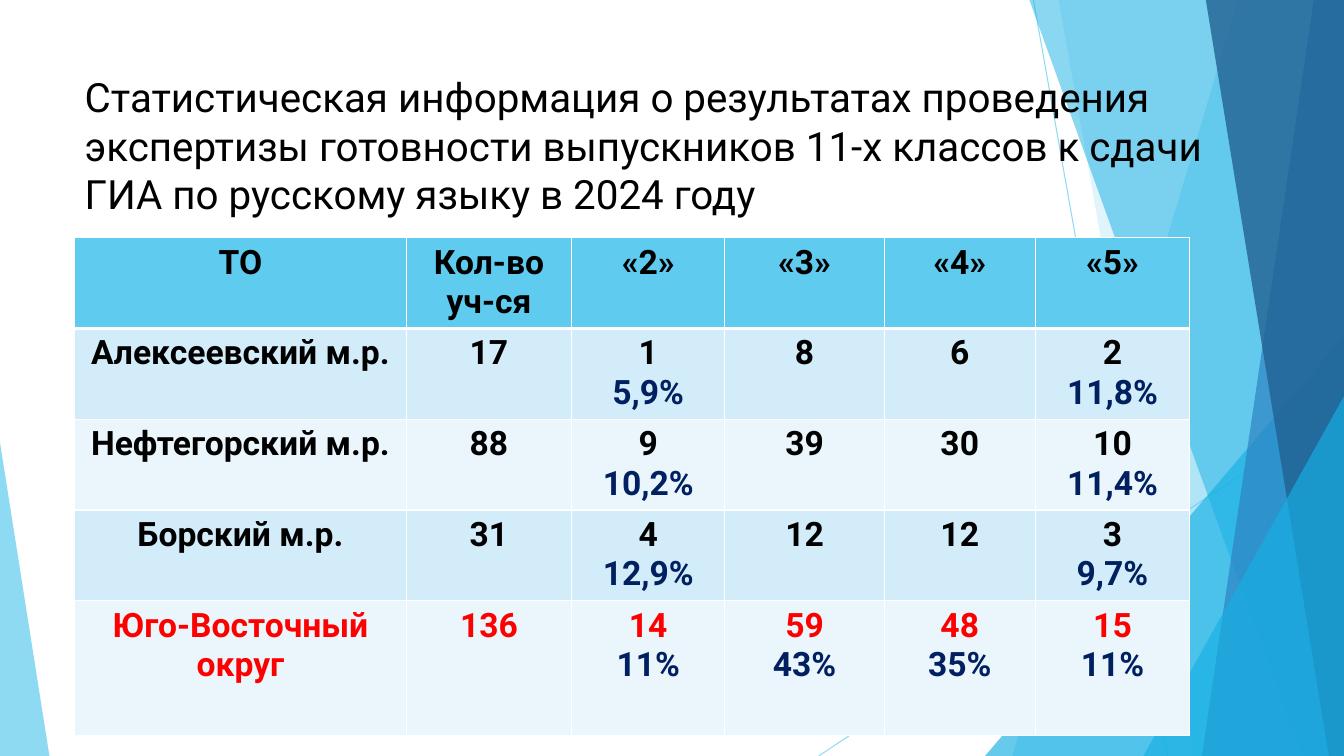
"""Builds a slide with a table of exam readiness results by district."""
from lxml import etree
from pptx import Presentation
from pptx.dml.color import RGBColor
from pptx.enum.shapes import MSO_CONNECTOR as CONN, MSO_SHAPE as SHAPE
from pptx.enum.text import MSO_ANCHOR as ANCHOR, MSO_AUTO_SIZE as AUTO, PP_ALIGN as ALIGN
from pptx.oxml.ns import qn
from pptx.util import Inches, Pt

COLORS = {
    "sky": "5FCBEF", "azure": "17B0E4", "blue": "2E83C3", "deep": "226292",
    "odd": "D2ECF9", "even": "EAF6FC", "white": "FFFFFF",
    "black": "000000", "navy": "002060", "red": "FF0000",
}


def paint(fill, color, alpha=100):
    fill.solid()
    fill.fore_color.rgb = RGBColor.from_string(COLORS[color])
    if alpha < 100:
        clr = fill._xPr.find(".//" + qn("a:srgbClr"))
        etree.SubElement(clr, qn("a:alpha"), val=str(alpha * 1000))


def write(p, text, size, color, bold, align):
    p.alignment = align
    r = p.add_run()
    r.text = text
    formats = {"name": "Roboto", "size": Pt(size), "bold": bold}
    for name, value in formats.items():
        setattr(r.font, name, value)
    r.font.color.rgb = RGBColor.from_string(COLORS[color])


prs = Presentation()
prs.slide_width, prs.slide_height = Inches(13.33), Inches(7.5)
s = prs.slides.add_slide(prs.slide_layouts[5])

for x1, y1, x2, y2 in [(10.25, 0, 11.58, 7.5), (13.33, 4.03, 8.12, 7.5)]:
    line = s.shapes.add_connector(
        CONN.STRAIGHT, Inches(x1), Inches(y1), Inches(x2), Inches(y2))
    line.line.width = Pt(0.75)
    paint(line.line.fill, "sky", 70)
    etree.SubElement(line._element.spPr, qn("a:effectLst"))

bands = [
    (12.28, 10.04, "sky", 36),
    (10.5, 11.83, "sky", 20),
    (9.77, 3.33, 3.56, 4.17, 1, "azure", 66),
    (10.21, 12.91, "azure", 50),
    (13.03, 11.92, "blue", 70),
    (11.96, 13.18, "deep", 80),
    (11.34, 3.93, 1.99, 3.57, 1, "azure", 66),
    (0, 4.39, 0.49, 3.11, 0, "sky", 70),
]
for *place, color, alpha in bands:
    if len(place) == 2:
        top_x, bottom_x = place
        fb = s.shapes.build_freeform(Inches(top_x), 0)
        corners = [(13.33, 0), (13.33, 7.5), (bottom_x, 7.5)]
        fb.add_line_segments([(Inches(x), Inches(y)) for x, y in corners])
        sp = fb.convert_to_shape()
    else:
        *box, apex = place
        sp = s.shapes.add_shape(SHAPE.ISOSCELES_TRIANGLE, *map(Inches, box))
        sp.adjustments[0] = apex
    sp.shadow.inherit = False
    sp.line.fill.background()
    paint(sp.fill, color, alpha)

title = s.shapes.title
s.shapes._spTree.append(title._element)
title.left, title.top, title.width, title.height = map(Inches, (0.74, 0.67, 11.82, 1.44))
tf = title.text_frame
for name, value in {"word_wrap": True, "auto_size": AUTO.NONE,
                    "vertical_anchor": ANCHOR.TOP}.items():
    setattr(tf, name, value)
write(tf.paragraphs[0],
      "Статистическая информация о результатах проведения экспертизы готовности "
      "выпускников 11-х классов к сдачи ГИА по русскому языку в 2024 году",
      28.8, "black", False, ALIGN.LEFT)

rows = [
    ["ТО", "Кол-во уч-ся", "«2»", "«3»", "«4»", "«5»"],
    ["Алексеевский м.р.", "17", "1\n5,9%", "8", "6", "2\n11,8%"],
    ["Нефтегорский м.р.", "88", "9\n10,2%", "39", "30", "10\n11,4%"],
    ["Борский м.р.", "31", "4\n12,9%", "12", "12", "3\n9,7%"],
    ["Юго-Восточный округ", "136", "14\n11%", "59\n43%", "48\n35%", "15\n11%"],
]
widths = [3.29, 1.64, 1.52, 1.58, 1.5, 1.53]
heights = [0.9, 0.9, 0.9, 0.9, 1.34]
table = s.shapes.add_table(len(rows), len(widths), Inches(0.74), Inches(2.36),
                           Inches(sum(widths)), Inches(sum(heights))).table
for col, width in zip(table.columns, widths):
    col.width = Inches(width)
for i, (row, height) in enumerate(zip(rows, heights)):
    table.rows[i].height = Inches(height)
    row_fill = "sky" if i == 0 else "odd" if i % 2 else "even"
    row_color = "red" if i == len(rows) - 1 else "black"
    for j, text in enumerate(row):
        cell = table.cell(i, j)
        paint(cell.fill, row_fill)
        tcPr = cell._tc.get_or_add_tcPr()
        borders = {"L": 1, "R": 1, "T": 3 if i == 1 else 1, "B": 3 if i == 0 else 1}
        for k, (side, width) in enumerate(borders.items()):
            ln = etree.Element(qn("a:ln" + side), w=str(Pt(width)))
            solid = etree.SubElement(ln, qn("a:solidFill"))
            etree.SubElement(solid, qn("a:srgbClr"), val=COLORS["white"])
            tcPr.insert(k, ln)
        tf = cell.text_frame
        for k, part in enumerate(text.split("\n")):
            p = tf.add_paragraph() if k else tf.paragraphs[0]
            write(p, part, 24, "navy" if k else row_color, True, ALIGN.CENTER)

prs.save("out.pptx")
